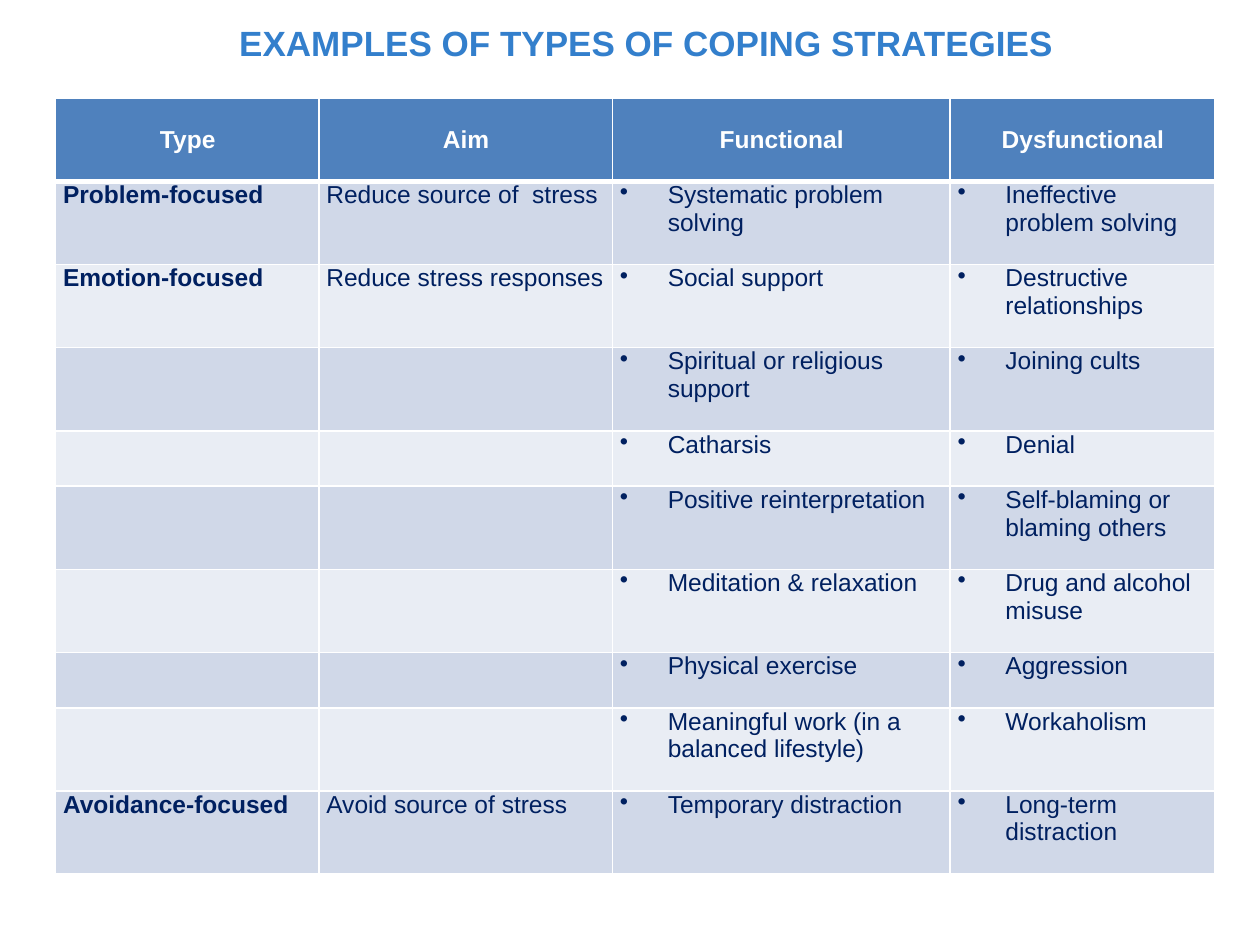
from lxml import etree
from pptx import Presentation
from pptx import util as u
from pptx.dml.color import RGBColor
from pptx.enum import text
from pptx.oxml import ns

NAVY, WHITE, HEADER_BLUE, TITLE_BLUE = "002060", "FFFFFF", "4F81BD", "337FCC"
BANDS = ["D0D8E8", "E9EDF4"]


def rgb(value):
    return RGBColor.from_string(value)


def write(frame, words, size=14, color=NAVY, bold=False, align=text.PP_ALIGN.LEFT,
          spacing=None, bullet=False):
    paragraph = frame.paragraphs[0]
    paragraph.alignment = align
    if spacing:
        paragraph.line_spacing = spacing
    if bullet:
        properties = paragraph._p.get_or_add_pPr()
        properties.set("marL", str(u.Inches(0.38)))
        properties.set("indent", str(u.Inches(-0.38)))
        etree.SubElement(properties, ns.qn("a:buChar"), char="•")
    run = paragraph.add_run()
    run.text = words
    run.font.name = "Arial"
    run.font.size = u.Pt(size)
    run.font.bold = bold
    run.font.color.rgb = rgb(color)


prs = Presentation()
prs.slide_width, prs.slide_height = u.Inches(10), u.Inches(7.5)
slide = prs.slides.add_slide(prs.slide_layouts[6])

# Strategies: type, aim, functional, dysfunctional
headings = ["Type", "Aim", "Functional", "Dysfunctional"]
strategies = [
    ["Problem-focused", "Reduce source of  stress", "Systematic problem solving",
     "Ineffective problem solving"],
    ["Emotion-focused", "Reduce stress responses", "Social support",
     "Destructive relationships"],
    ["", "", "Spiritual or religious support", "Joining cults"],
    ["", "", "Catharsis", "Denial"],
    ["", "", "Positive reinterpretation", "Self-blaming or blaming others"],
    ["", "", "Meditation & relaxation", "Drug and alcohol misuse"],
    ["", "", "Physical exercise", "Aggression"],
    ["", "", "Meaningful work (in a balanced lifestyle)", "Workaholism"],
    ["Avoidance-focused", "Avoid source of stress", "Temporary distraction",
     "Long-term distraction"],
]
rows = [headings] + strategies
column_widths = [2.09, 2.33, 2.68, 2.1]
SHORT_ROWS = {"Catharsis", "Physical exercise"}
row_heights = [0.44 if row[2] in SHORT_ROWS else 0.66 for row in rows]

# Table grid
coping = slide.shapes.add_table(
    len(rows), len(headings), u.Inches(0.44), u.Inches(0.78),
    u.Inches(sum(column_widths)), u.Inches(sum(row_heights))).table
coping.horz_banding = False
for column, width in zip(coping.columns, column_widths):
    column.width = u.Inches(width)
for row, height in zip(coping.rows, row_heights):
    row.height = u.Inches(height)

# Cells: white borders, with a thick rule under the header
for r, row in enumerate(rows):
    for c, words in enumerate(row):
        cell = coping.cell(r, c)
        cell.margin_left, cell.margin_right = u.Inches(0.06), u.Inches(0.05)
        cell.margin_top = cell.margin_bottom = 0
        cell_properties = cell._tc.get_or_add_tcPr()
        for side in ["lnL", "lnR", "lnT", "lnB"]:
            thick = (r, side) in [(0, "lnB"), (1, "lnT")]
            border = etree.SubElement(cell_properties, ns.qn("a:" + side),
                                      w=str(u.Pt(3 if thick else 1)))
            paint = etree.SubElement(border, ns.qn("a:solidFill"))
            etree.SubElement(paint, ns.qn("a:srgbClr"), val=WHITE)
        cell.fill.solid()
        cell.fill.fore_color.rgb = rgb(BANDS[(r - 1) % 2] if r else HEADER_BLUE)
        if r == 0:
            cell.vertical_anchor = text.MSO_ANCHOR.MIDDLE
            write(cell.text_frame, words, color=WHITE, bold=True,
                  align=text.PP_ALIGN.CENTER)
        elif words:
            write(cell.text_frame, words, bold=c == 0, bullet=c >= 2)

# Title
title = slide.shapes.add_textbox(u.Inches(1.8), u.Inches(0.09),
                                 u.Inches(6.89), u.Inches(0.44)).text_frame
title.word_wrap = True
write(title, "EXAMPLES OF TYPES OF COPING STRATEGIES", size=20, color=TITLE_BLUE,
      bold=True, spacing=1.1)

prs.save("out.pptx")
